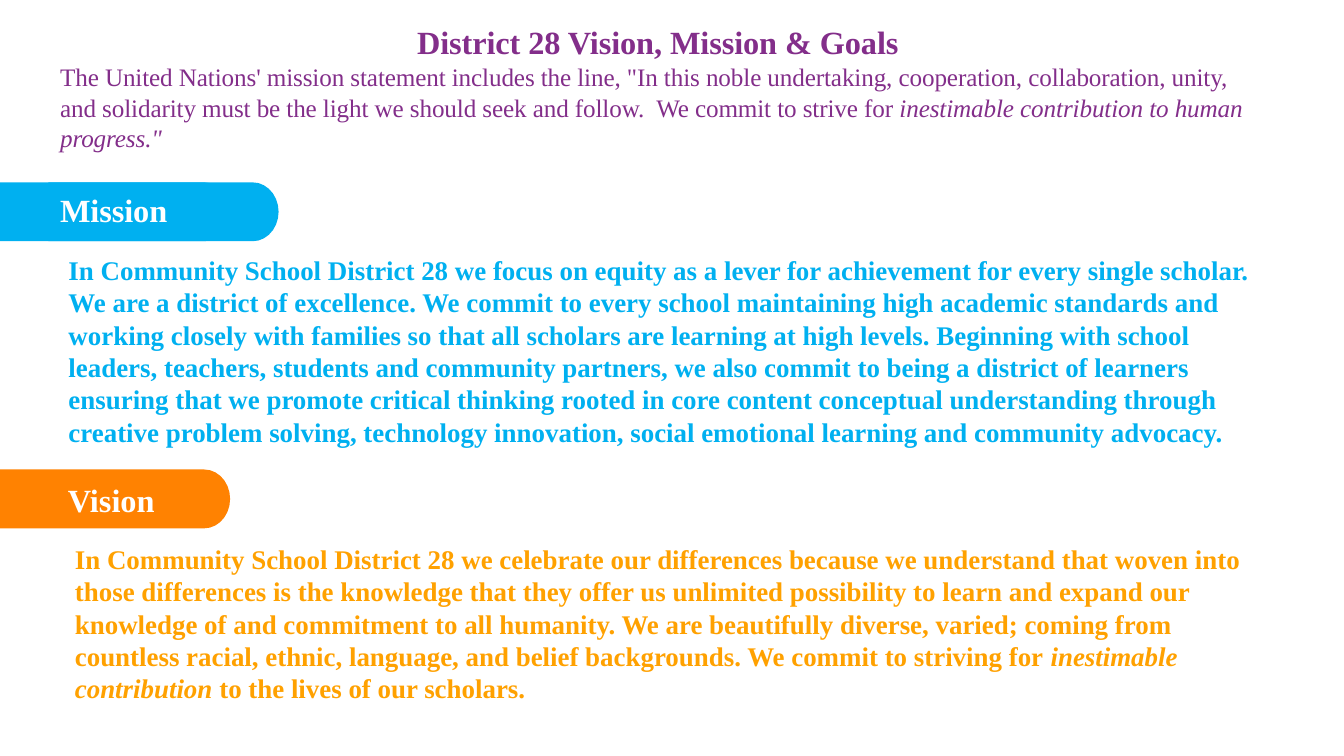
from dataclasses import dataclass
from math import cos, pi, sin

from pptx import Presentation
from pptx.dml.color import RGBColor
from pptx.enum.text import MSO_AUTO_SIZE as AutoSize, PP_ALIGN as Align
from pptx.slide import Slide
from pptx.util import Inches, Pt

COLORS = {
    "purple": "832E8A",
    "blue": "00B0F0",
    "orange": "FF8201",
    "amber": "FFA100",
    "white": "FFFFFF",
}
FONT = "Times New Roman"
TAB_WIDTH, TAB_HEIGHT = 3.56, 0.91
CURVE_WIDTH = 0.4
CURVE_STEPS = 14


@dataclass
class Tab:
    left: float
    top: float
    color: str


@dataclass
class TextRun:
    text: str
    italic: bool = False


@dataclass
class TextParagraph:
    runs: list[TextRun]
    size: float
    color: str
    bold: bool = True
    align: Align = Align.LEFT
    space_before: float = 0
    tracking: float = 0


@dataclass
class TextBlock:
    left: float
    top: float
    width: float
    height: float
    paragraphs: list[TextParagraph]
    inset_x: float = 0
    inset_top: float = 0.01
    inset_bottom: float = 0


TABS = [
    Tab(0, 2.82, "blue"),
    Tab(0.75, 2.82, "blue"),
    Tab(0, 7.26, "orange"),
]

TEXT_BLOCKS = [
    # Mission
    TextBlock(0.92, 2.93, 3.92, 0.62, [
        TextParagraph([TextRun("Mission")], 36, "white", space_before=1, tracking=-0.1),
    ], inset_x=0.01),
    TextBlock(1.06, 3.91, 18.83, 3.03, [
        TextParagraph([TextRun(
            "In Community School District 28 we focus on equity as a lever for achievement "
            "for every single scholar. We are a district of excellence. We commit to every "
            "school maintaining high academic standards and working closely with families so "
            "that all scholars are learning at high levels. Beginning with school leaders, "
            "teachers, students and community partners, we also commit to being a district of "
            "learners ensuring that we promote critical thinking rooted in core content "
            "conceptual understanding through creative problem solving, technology innovation, "
            "social emotional learning and community advocacy."
        )], 30, "blue"),
    ]),
    # Vision
    TextBlock(1.04, 7.41, 2.8, 0.62, [
        TextParagraph([TextRun("Vision")], 36, "white", space_before=1),
    ], inset_x=0.01),
    TextBlock(1.06, 8.34, 18.38, 2.63, [
        TextParagraph([
            TextRun(
                "In Community School District 28 we celebrate our differences because we "
                "understand that woven into those differences is the knowledge that they offer "
                "us unlimited possibility to learn and expand our knowledge of and commitment "
                "to all humanity. We are beautifully diverse, varied; coming from countless "
                "racial, ethnic, language, and belief backgrounds. We commit to striving for "
            ),
            TextRun("inestimable contribution", italic=True),
            TextRun(" to the lives of our scholars."),
        ], 30, "amber"),
    ], inset_x=0.1, inset_top=0.05, inset_bottom=0.05),
    # Title and introduction
    TextBlock(0.92, 0.33, 18.51, 2.05, [
        TextParagraph([TextRun("District 28 Vision, Mission & Goals")], 36, "purple",
                      align=Align.CENTER, space_before=1, tracking=-0.1),
        TextParagraph([
            TextRun(
                "The United Nations' mission statement includes the line, \"In this noble "
                "undertaking, cooperation, collaboration, unity, and solidarity must be the "
                "light we should seek and follow.  We commit to strive for "
            ),
            TextRun("inestimable contribution to human progress.\"", italic=True),
        ], 28, "purple", bold=False, space_before=1, tracking=-0.1),
    ], inset_x=0.01),
]


def add_tab(slide: Slide, tab: Tab) -> None:
    """Draw a bar whose right end is a half ellipse."""
    curve_left = tab.left + TAB_WIDTH - CURVE_WIDTH
    radius = TAB_HEIGHT / 2
    angles = [pi * step / CURVE_STEPS for step in range(CURVE_STEPS + 1)]
    outline = [(curve_left + CURVE_WIDTH * sin(angle), tab.top + radius * (1 - cos(angle)))
               for angle in angles]
    outline.append((tab.left, tab.top + TAB_HEIGHT))
    builder = slide.shapes.build_freeform(Inches(tab.left), Inches(tab.top))
    builder.add_line_segments([(Inches(x), Inches(y)) for x, y in outline], close=True)
    shape = builder.convert_to_shape()
    shape.shadow.inherit = False
    shape.fill.solid()
    shape.fill.fore_color.rgb = RGBColor.from_string(COLORS[tab.color])
    shape.line.fill.background()


def add_text_block(slide: Slide, block: TextBlock) -> None:
    box = slide.shapes.add_textbox(Inches(block.left), Inches(block.top),
                                   Inches(block.width), Inches(block.height))
    frame = box.text_frame
    frame.word_wrap = True
    frame.auto_size = AutoSize.SHAPE_TO_FIT_TEXT
    frame.margin_left = frame.margin_right = Inches(block.inset_x)
    frame.margin_top = Inches(block.inset_top)
    frame.margin_bottom = Inches(block.inset_bottom)
    for index, content in enumerate(block.paragraphs):
        paragraph = frame.add_paragraph() if index else frame.paragraphs[0]
        paragraph.alignment = content.align
        paragraph.space_before = Pt(content.space_before)
        for text_run in content.runs:
            run = paragraph.add_run()
            run.text = text_run.text
            run.font.name = FONT
            run.font.size = Pt(content.size)
            run.font.bold = content.bold
            run.font.italic = text_run.italic
            run.font.color.rgb = RGBColor.from_string(COLORS[content.color])
            if content.tracking:
                run._r.get_or_add_rPr().set("spc", str(round(content.tracking * 100)))


def main() -> None:
    presentation = Presentation()
    presentation.slide_width = Inches(20.79)
    presentation.slide_height = Inches(11.69)
    slide = presentation.slides.add_slide(presentation.slide_layouts[6])
    for tab in TABS:
        add_tab(slide, tab)
    for block in TEXT_BLOCKS:
        add_text_block(slide, block)
    presentation.save("out.pptx")


if __name__ == "__main__":
    main()
